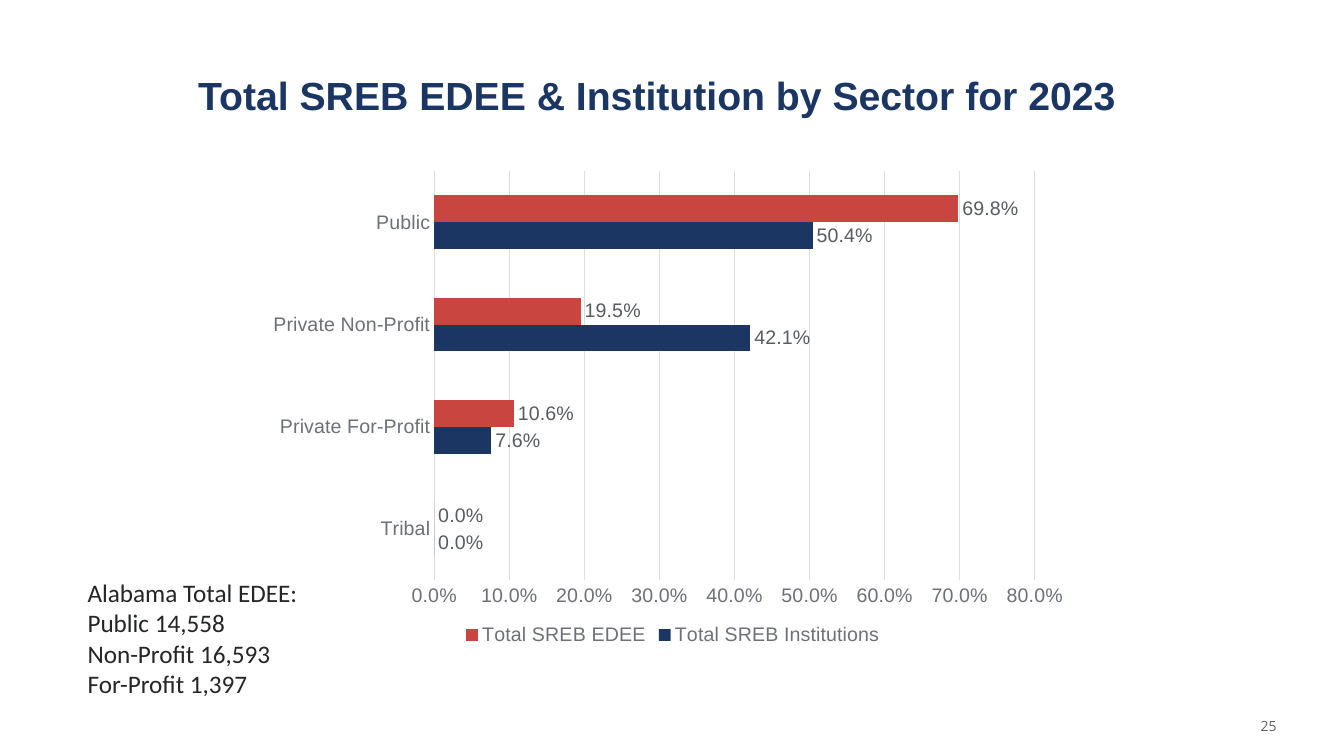
from lxml import etree
from pptx import Presentation
from pptx.chart.data import CategoryChartData
from pptx.dml.color import RGBColor
from pptx.enum import chart as ch, text
from pptx.oxml.ns import qn
from pptx.util import Inches, Pt

TITLE = "Total SREB EDEE & Institution by Sector for 2023"
SECTORS = ["Tribal", "Private For-Profit", "Private Non-Profit", "Public"]
SERIES = [
    ("Total SREB Institutions", [0, 0.076, 0.421, 0.504], "navy"),
    ("Total SREB EDEE", [0, 0.106, 0.195, 0.698], "red"),
]
ALABAMA_TOTALS = [
    "Alabama Total EDEE:",
    "Public 14,558",
    "Non-Profit 16,593",
    "For-Profit 1,397",
]
PAGE_NUMBER = "25"
PERCENT = "0.0%"
COLORS = {
    "navy": "1B3663", "red": "C84540", "ink": "242527", "axis": "6D7076",
    "label": "585B60", "grid": "DDDEE0", "page": "606060",
}
PLACES = {
    "title": (1.81, 0.66, 9.41, 0.57),
    "chart": (2.71, 1.5, 7.91, 4.95),
    "totals": (0.77, 5.68, 2.3, 1.31),
    "page": (9.76, 7.05, 3, 0.3),
}
PLOT_AREA = {"x": 0.2, "y": 0.04, "w": 0.755, "h": 0.82}


def box(name):
    return [Inches(length) for length in PLACES[name]]


def rgb(name):
    return RGBColor.from_string(COLORS[name])


def style(font, color, size=14, name="Arial", bold=False):
    for attribute, value in {"size": Pt(size), "name": name, "bold": bold}.items():
        setattr(font, attribute, value)
    font.color.rgb = rgb(color)


def draw_line(line):
    line.color.rgb = rgb("grid")
    line.width = Pt(0.75)


def write(frame, lines, align, **look):
    frame.word_wrap = True
    for i, line in enumerate(lines):
        paragraph = frame.paragraphs[0] if i == 0 else frame.add_paragraph()
        paragraph.text = line
        paragraph.alignment = align
        style(paragraph.runs[0].font, **look)


def place_plot(chart):
    """Fix the inner plot area as fractions of the chart."""
    plot_area = chart.plots[0]._element.getparent()
    for old in plot_area.findall(qn("c:layout")):
        plot_area.remove(old)
    layout = etree.Element(qn("c:layout"))
    manual = etree.SubElement(layout, qn("c:manualLayout"))
    settings = {"layoutTarget": "inner", "xMode": "edge", "yMode": "edge", **PLOT_AREA}
    for tag, value in settings.items():
        etree.SubElement(manual, qn(f"c:{tag}")).set("val", str(value))
    plot_area.insert(0, layout)


def add_sector_chart(slide):
    data = CategoryChartData(number_format=PERCENT)
    data.categories = SECTORS
    for name, values, _ in SERIES:
        data.add_series(name, values)
    chart = slide.shapes.add_chart(
        ch.XL_CHART_TYPE.BAR_CLUSTERED, *box("chart"), data).chart
    chart.has_title = False
    style(chart.font, "ink")
    place_plot(chart)

    plot = chart.plots[0]
    plot.gap_width = 182
    plot.vary_by_categories = False
    for series, (_, _, color) in zip(plot.series, SERIES):
        series.format.fill.solid()
        series.format.fill.fore_color.rgb = rgb(color)
        labels = series.data_labels
        for attribute, value in {
            "show_value": True, "number_format": PERCENT,
            "number_format_is_linked": False,
            "position": ch.XL_LABEL_POSITION.OUTSIDE_END,
        }.items():
            setattr(labels, attribute, value)
        style(labels.font, "label")

    sectors, shares = chart.category_axis, chart.value_axis
    for axis in (sectors, shares):
        axis.major_tick_mark = axis.minor_tick_mark = ch.XL_TICK_MARK.NONE
        style(axis.tick_labels.font, "axis")
    sectors.has_major_gridlines = False
    draw_line(sectors.format.line)
    shares.minimum_scale, shares.maximum_scale, shares.major_unit = 0, 0.8, 0.1
    shares.has_major_gridlines = True
    draw_line(shares.major_gridlines.format.line)
    shares.format.line.fill.background()
    shares.tick_labels.number_format = PERCENT
    shares.tick_labels.number_format_is_linked = False

    chart.has_legend = True
    chart.legend.position = ch.XL_LEGEND_POSITION.BOTTOM
    chart.legend.include_in_layout = False
    style(chart.legend.font, "axis")


def main():
    deck = Presentation()
    deck.slide_width, deck.slide_height = Inches(13.33), Inches(7.5)
    slide = deck.slides.add_slide(deck.slide_layouts[5])

    title = slide.shapes.title
    title.left, title.top, title.width, title.height = box("title")
    write(title.text_frame, [TITLE], text.PP_ALIGN.CENTER,
          color="navy", size=28, bold=True)

    add_sector_chart(slide)

    totals = slide.shapes.add_textbox(*box("totals"))
    write(totals.text_frame, ALABAMA_TOTALS, text.PP_ALIGN.LEFT,
          color="ink", size=18, name="Calibri")

    page = slide.shapes.add_textbox(*box("page"))
    page.text_frame.vertical_anchor = text.MSO_ANCHOR.MIDDLE
    write(page.text_frame, [PAGE_NUMBER], text.PP_ALIGN.RIGHT,
          color="page", size=10, name="Open Sans")

    deck.save("out.pptx")


if __name__ == "__main__":
    main()
